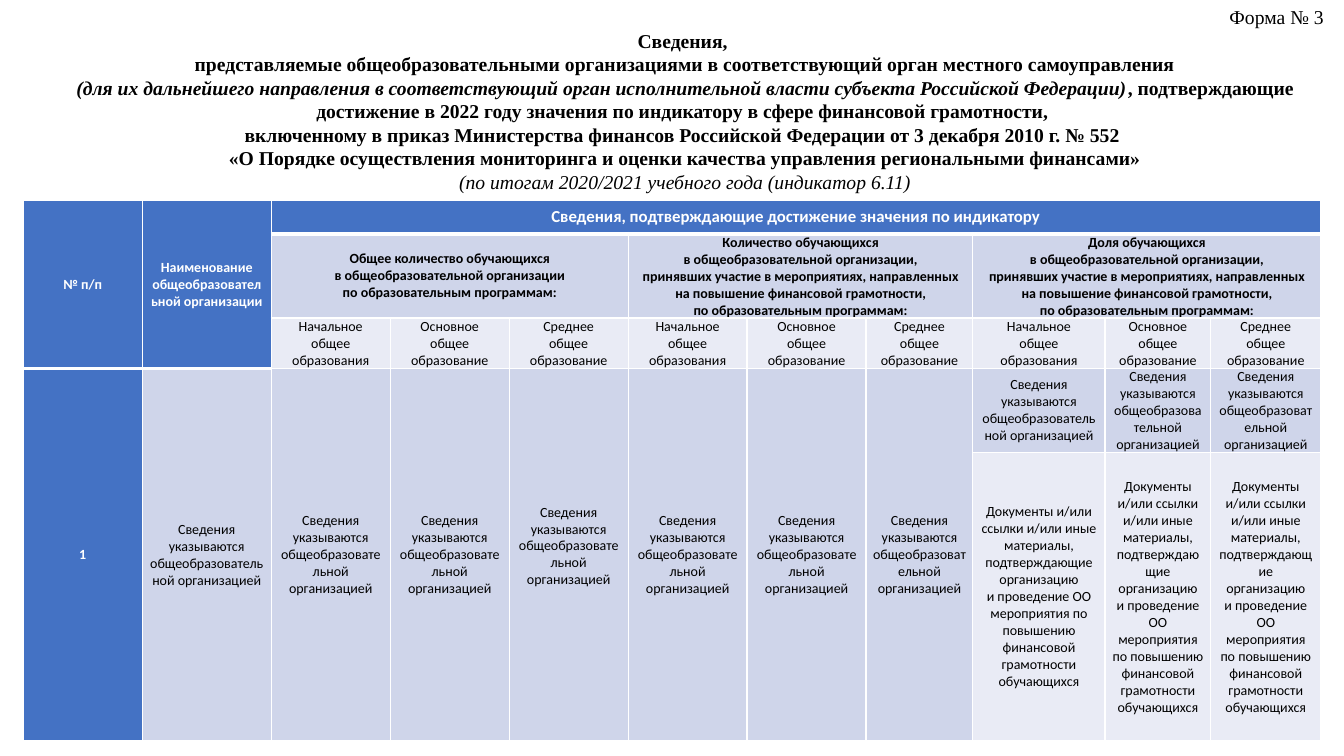
from pptx import Presentation
from pptx.util import Inches, Pt
from pptx.dml.color import RGBColor as RGB
from pptx.enum.text import PP_ALIGN as AL, MSO_ANCHOR as ANC, MSO_AUTO_SIZE as FIT
from pptx.oxml import parse_xml
from pptx.oxml.ns import nsdecls

HEX = {"head": "4472C4", "band": "CFD5EA", "pale": "E9EBF5",
       "white": "FFFFFF", "black": "000000"}


def style(font, name, size, color, bold=False, italic=False):
    form = {"name": name, "size": Pt(size), "bold": bold, "italic": italic}
    for key, val in form.items():
        setattr(font, key, val)
    font.color.rgb = RGB.from_string(HEX[color])


def edge(cell, side, width):
    cell._tc.get_or_add_tcPr().append(parse_xml(
        f'<a:ln{side} {nsdecls("a")} w="{Pt(width)}"><a:solidFill>'
        f'<a:srgbClr val="{HEX["white"]}"/></a:solidFill></a:ln{side}>'))


prs = Presentation()
prs.slide_width, prs.slide_height = Inches(13.33), Inches(7.5)
slide = prs.slides.add_slide(prs.slide_layouts[5])

# Heading: each paragraph is an alignment and its (text, bold, italic) runs
heading = [
    (AL.RIGHT, [("Форма № 3", False, False)]),
    (AL.CENTER, [
        ("Сведения, \nпредставляемые общеобразовательными организациями "
         "в соответствующий орган местного самоуправления\n", True, False),
        ("(для их дальнейшего направления в соответствующий орган "
         "исполнительной власти субъекта Российской Федерации)", True, True),
        (", подтверждающие достижение в 2022 году значения по индикатору "
         "в сфере финансовой грамотности, \n"
         "включенному в приказ Министерства финансов Российской Федерации "
         "от 3 декабря 2010 г. № 552 \n"
         "«О Порядке осуществления мониторинга и оценки качества "
         "управления региональными финансами»", True, False)]),
    (AL.CENTER, [("(по итогам 2020/2021 учебного года (индикатор 6.11)",
                  False, True)]),
]
title = slide.shapes.title
title.left, title.top = Inches(0.36), Inches(0)
title.width, title.height = Inches(12.87), Inches(1.99)
frame = title.text_frame
frame.word_wrap, frame.auto_size = True, FIT.SHAPE_TO_FIT_TEXT
frame.vertical_anchor = ANC.TOP
for n, (align, runs) in enumerate(heading):
    para = frame.add_paragraph() if n else frame.paragraphs[0]
    para.alignment = align
    for text, bold, italic in runs:
        for k, line in enumerate(text.split("\n")):
            if k:
                para.add_line_break()
            if line:
                run = para.add_run()
                run.text = line
                style(run.font, "Times New Roman", 14, "black", bold, italic)

# Table grid
cols = [1.18, 1.28] + [1.18] * 5 + [1.06, 1.31, 1.05, 1.09]
rows = [0.33, 0.77, 0.46, 0.77, 2.86]
table = slide.shapes.add_table(len(rows), len(cols), Inches(0.23), Inches(1.99),
                               Inches(12.87), Inches(sum(rows))).table
for col, width in zip(table.columns, cols):
    col.width = Inches(width)
for row, height in zip(table.rows, rows):
    row.height = Inches(height)

# Cell wording, by row and column
given = "Сведения указываются общеобразовательной организацией"
proof = ("Документы и/или ссылки и/или иные материалы, подтверждающие организацию\n"
         "и проведение ОО мероприятия по повышению финансовой грамотности обучающихся")
share = ("в общеобразовательной организации,\n"
         "принявших участие в мероприятиях, направленных\n"
         "на повышение финансовой грамотности,\nпо образовательным программам:")
words = {
    (0, 0): "№ п/п",
    (0, 1): "Наименование общеобразовательной организации",
    (0, 2): "Сведения, подтверждающие достижение значения по индикатору",
    (1, 2): "Общее количество обучающихся\nв общеобразовательной организации\n"
            "по образовательным программам:",
    (1, 5): "Количество обучающихся\n" + share,
    (1, 8): "Доля обучающихся\n" + share,
    (3, 0): "1",
    (3, 1): "Сведения\nуказываются общеобразовательной организацией",
}
levels = ["Начальное\nобщее образования", "Основное\nобщее образование",
          "Среднее\nобщее образование"]
for c in range(2, 11):
    words[2, c] = levels[(c - 2) % 3]
    words[3, c] = given
    if c >= 8:
        words[4, c] = proof

# Fills, borders and text
for r in range(len(rows)):
    for c in range(len(cols)):
        cell = table.cell(r, c)
        head = r == 0 or c == 0 or (c == 1 and r < 3)
        pale = r == 2 or (r == 4 and c >= 8)
        last = 2 if c < 2 else 0
        for side in "LRTB":
            thick = (side == "B" and r in (0, last)) or (side == "T" and r == last + 1)
            edge(cell, side, 3 if thick else 1)
        cell.fill.solid()
        cell.fill.fore_color.rgb = RGB.from_string(
            HEX["head" if head else "pale" if pale else "band"])
        cell.vertical_anchor = ANC.MIDDLE
        cell.margin_left = cell.margin_right = Inches(0.07)
        cell.margin_top = cell.margin_bottom = 0
        if (r, c) in words:
            cell.text_frame.text = words[r, c]
        for para in cell.text_frame.paragraphs:
            para.alignment = AL.CENTER
            for run in para.runs:
                style(run.font, "Calibri", 12 if (r, c) == (0, 2) else 10,
                      "white" if head else "black", head or r == 1)
table.cell(3, 4).margin_bottom = Inches(0.17)

# Merged cells: first and last corner
for start, end in [((0, 0), (2, 0)), ((0, 1), (2, 1)), ((0, 2), (0, 10))]:
    table.cell(*start).merge(table.cell(*end))
for c in (2, 5, 8):
    table.cell(1, c).merge(table.cell(1, c + 2))
for c in range(8):
    table.cell(3, c).merge(table.cell(4, c))

prs.save("out.pptx")
